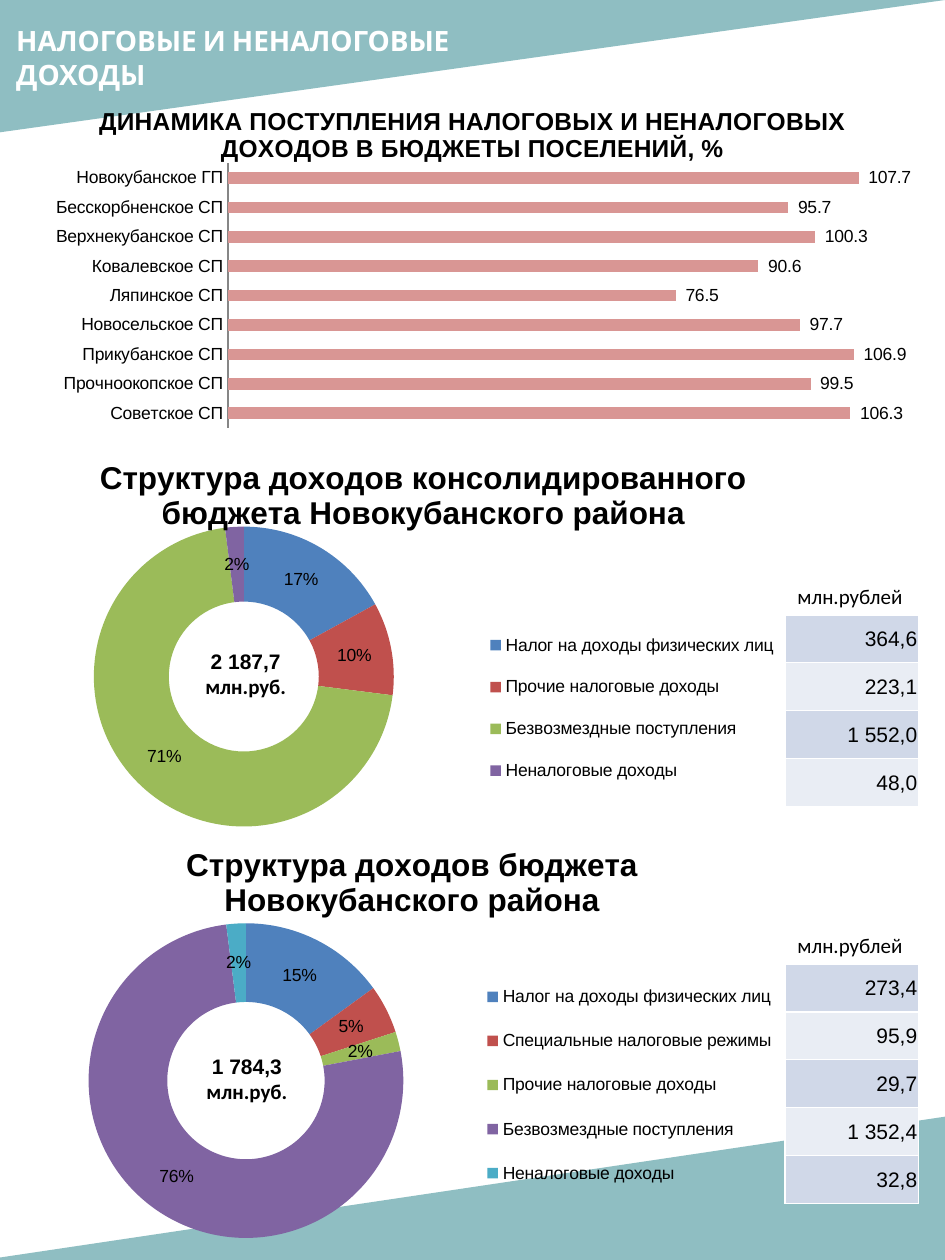
from dataclasses import dataclass
from lxml import etree
from pptx import Presentation
from pptx import util as u
from pptx.chart.data import CategoryChartData
from pptx.dml.color import RGBColor
from pptx.enum import chart as ch, shapes, text
from pptx.oxml import parse_xml
from pptx.oxml.ns import nsdecls, qn

COLUMNS, ROWS = 750, 1000  # grid laid over the 7.5 x 10 inch slide
WIDTH, HEIGHT = u.Inches(7.5), u.Inches(10)
TEAL, BLACK, WHITE = "519AA0", "000000", "FFFFFF"
BANDS = ("D0D8E8", "E9EDF4")
SLICES = ("4F81BD", "C0504D", "9BBB59", "8064A2", "4BACC6")
SETTLEMENTS = {
    "Новокубанское ГП": 107.7, "Бесскорбненское СП": 95.7, "Верхнекубанское СП": 100.3,
    "Ковалевское СП": 90.6, "Ляпинское СП": 76.5, "Новосельское СП": 97.7,
    "Прикубанское СП": 106.9, "Прочноокопское СП": 99.5, "Советское СП": 106.3,
}


@dataclass
class Area:
    col: float
    row: float
    cols: float
    rows: float

    def place(self) -> tuple[int, int, int, int]:
        across, down = WIDTH / COLUMNS, HEIGHT / ROWS
        return (round(self.col * across), round(self.row * down),
                round(self.cols * across), round(self.rows * down))


@dataclass
class Span:
    words: str
    font: str
    size: float = 12
    color: str = BLACK
    bold: bool = False


@dataclass
class Budget:
    title: str
    area: Area
    plot: tuple
    legend: tuple
    shares: dict
    total: str
    total_area: Area
    amounts: tuple
    table_row: float


BUDGETS = (
    Budget("Структура доходов консолидированного бюджета Новокубанского района",
           Area(-9, 346, 690, 320), (0.121, 0.225, 0.345, 0.744), (0.57, 0.44, 0.34, 0.47),
           {"Налог на доходы физических лиц": 17, "Прочие налоговые доходы": 10,
            "Безвозмездные поступления": 71, "Неналоговые доходы": 2},
           "2 187,7 ", Area(151, 510, 88, 50), ("364,6", "223,1", "1 552,0", "48,0"), 488),
    Budget("Структура доходов бюджета Новокубанского района",
           Area(-18, 653, 690, 347), (0.128, 0.23, 0.362, 0.72), (0.58, 0.32, 0.34, 0.56),
           {"Налог на доходы физических лиц": 15, "Специальные налоговые режимы": 5,
            "Прочие налоговые доходы": 2, "Безвозмездные поступления": 76,
            "Неналоговые доходы": 2},
           "1 784,3 ", Area(151, 831, 90, 50),
           ("273,4", "95,9", "29,7", "1 352,4", "32,8"), 765),
)


def paint(fill, color: str) -> None:
    fill.solid()
    fill.fore_color.rgb = RGBColor.from_string(color)


def style_font(font, name: str, size: float, color: str, bold: bool) -> None:
    font.name, font.size, font.bold = name, u.Pt(size), bold
    font.color.rgb = RGBColor.from_string(color)


def write(para, spans: list[Span], align) -> None:
    para.alignment = align
    for span in spans:
        run = para.add_run()
        run.text = span.words
        style_font(run.font, span.font, span.size, span.color, span.bold)


def add_text(page, area: Area, spans: list[Span], align=text.PP_ALIGN.LEFT) -> None:
    box = page.shapes.add_textbox(*area.place())
    box.text_frame.word_wrap = True
    write(box.text_frame.paragraphs[0], spans, align)


def add_corner(page, area: Area, flip: str) -> None:
    corner = page.shapes.add_shape(shapes.MSO_SHAPE.RIGHT_TRIANGLE, *area.place())
    corner.shadow.inherit = False
    corner.rotation = 180
    corner._element.spPr.find(qn("a:xfrm")).set(flip, "1")
    paint(corner.fill, TEAL)
    corner.line.fill.background()
    color = corner._element.spPr.find(".//" + qn("a:srgbClr"))
    etree.SubElement(color, qn("a:alpha")).set("val", "64000")


def add_amounts(page, area: Area, amounts: tuple) -> None:
    table = page.shapes.add_table(len(amounts), 1, *area.place()).table
    table.first_row = table.horz_banding = False
    for index, amount in enumerate(amounts):
        cell = table.cell(index, 0)
        cell.margin_left = cell.margin_right = cell.margin_top = u.Inches(0.01)
        cell.margin_bottom = 0
        cell.vertical_anchor = text.MSO_ANCHOR.MIDDLE
        write(cell.text_frame.paragraphs[0], [Span(amount, "Arial")], text.PP_ALIGN.RIGHT)
        for side in ("lnL", "lnR", "lnT", "lnB"):
            cell._tc.get_or_add_tcPr().append(parse_xml(
                f'<a:{side} {nsdecls("a")} w="12700"><a:solidFill>'
                f'<a:srgbClr val="{WHITE}"/></a:solidFill></a:{side}>'))
        paint(cell.fill, BANDS[index % 2])


def set_layout(parent, index: int, shares: tuple, inner: bool) -> None:
    """Pin a chart part at x, y, width and height shares of the chart."""
    for old in parent.findall(qn("c:layout")):
        parent.remove(old)
    target = '<c:layoutTarget val="inner"/>' if inner else ""
    modes = '<c:xMode val="edge"/><c:yMode val="edge"/>'
    sizes = "".join(f'<c:{key} val="{share}"/>' for key, share in zip("xywh", shares))
    parent.insert(index, parse_xml(
        f'<c:layout {nsdecls("c")}><c:manualLayout>{target}{modes}{sizes}'
        '</c:manualLayout></c:layout>'))


def add_chart(page, kind, area: Area, title: str, size: float, values: dict, plot: tuple):
    data = CategoryChartData()
    data.categories = list(values)
    data.add_series("Series 1", list(values.values()))
    chart = page.shapes.add_chart(kind, *area.place(), data).chart
    style_font(chart.font, "Arial", 10, BLACK, False)
    chart.has_legend = False
    chart.has_title = True
    para = chart.chart_title.text_frame.paragraphs[0]
    write(para, [Span(title, "Arial", size, bold=True)], text.PP_ALIGN.CENTER)
    chart.chart_title.include_in_layout = False
    set_layout(chart._chartSpace.chart.plotArea, 0, plot, True)
    chart.plots[0].has_data_labels = True
    style_font(chart.plots[0].data_labels.font, "Arial", 10, BLACK, False)
    return chart


def add_dynamics(page) -> None:
    chart = add_chart(
        page, ch.XL_CHART_TYPE.BAR_CLUSTERED, Area(0, 69, 750, 282),
        "ДИНАМИКА ПОСТУПЛЕНИЯ НАЛОГОВЫХ И НЕНАЛОГОВЫХ ДОХОДОВ В БЮДЖЕТЫ ПОСЕЛЕНИЙ, %",
        14, SETTLEMENTS, (0.241, 0.215, 0.744, 0.745))
    plot, names, scale = chart.plots[0], chart.category_axis, chart.value_axis
    plot.gap_width, plot.overlap, plot.vary_by_categories = 150, -25, False
    paint(plot.series[0].format.fill, "D99694")
    labels = plot.data_labels
    labels.show_value = True
    labels.number_format, labels.number_format_is_linked = r"#\ ##0.0", False
    labels.position = ch.XL_LABEL_POSITION.OUTSIDE_END
    names.reverse_order = True
    names.major_tick_mark = names.minor_tick_mark = ch.XL_TICK_MARK.NONE
    paint(names.format.line.fill, "868686")
    names.format.line.width = u.Pt(1)
    scale.minimum_scale, scale.maximum_scale = 0, 120
    scale.has_major_gridlines = scale.visible = False


def add_budget(page, budget: Budget) -> None:
    chart = add_chart(page, ch.XL_CHART_TYPE.DOUGHNUT, budget.area, budget.title, 18,
                      budget.shares, budget.plot)
    plot = chart.plots[0]
    plot.vary_by_categories = True
    plot._element.find(qn("c:holeSize")).set("val", "50")
    for index, color in enumerate(SLICES[:len(budget.shares)]):
        paint(plot.series[0].points[index].format.fill, color)
    labels = plot.data_labels
    labels.show_percentage, labels.show_value = True, False
    labels.number_format, labels.number_format_is_linked = "0%", False
    chart.has_legend = True
    chart.legend.position = ch.XL_LEGEND_POSITION.RIGHT
    chart.legend.include_in_layout = False
    style_font(chart.legend.font, "Arial", 10, BLACK, False)
    set_layout(chart.legend._element, 1, budget.legend, False)
    add_text(page, budget.total_area,
             [Span(budget.total, "Arial", bold=True), Span("млн.руб.", "Calibri", bold=True)],
             text.PP_ALIGN.CENTER)


def main() -> None:
    deck = Presentation()
    deck.slide_width, deck.slide_height = WIDTH, HEIGHT
    page = deck.slides.add_slide(deck.slide_layouts[6])
    add_corner(page, Area(0, 0, 750, 105), "flipH")
    add_corner(page, Area(-13, 886, 765, 114), "flipV")
    add_text(page, Area(3, 14, 451, 64),
             [Span("НАЛОГОВЫЕ И НЕНАЛОГОВЫЕ ДОХОДЫ", "Cabin", 16, WHITE, True)])
    for budget in BUDGETS:
        add_text(page, Area(623, budget.table_row - 30, 112, 30),
                 [Span("млн.рублей", "Calibri")])
        add_amounts(page, Area(623, budget.table_row, 106, 38 * len(budget.amounts)),
                    budget.amounts)
    add_dynamics(page)
    for budget in BUDGETS:
        add_budget(page, budget)
    deck.save("out.pptx")


if __name__ == "__main__":
    main()
